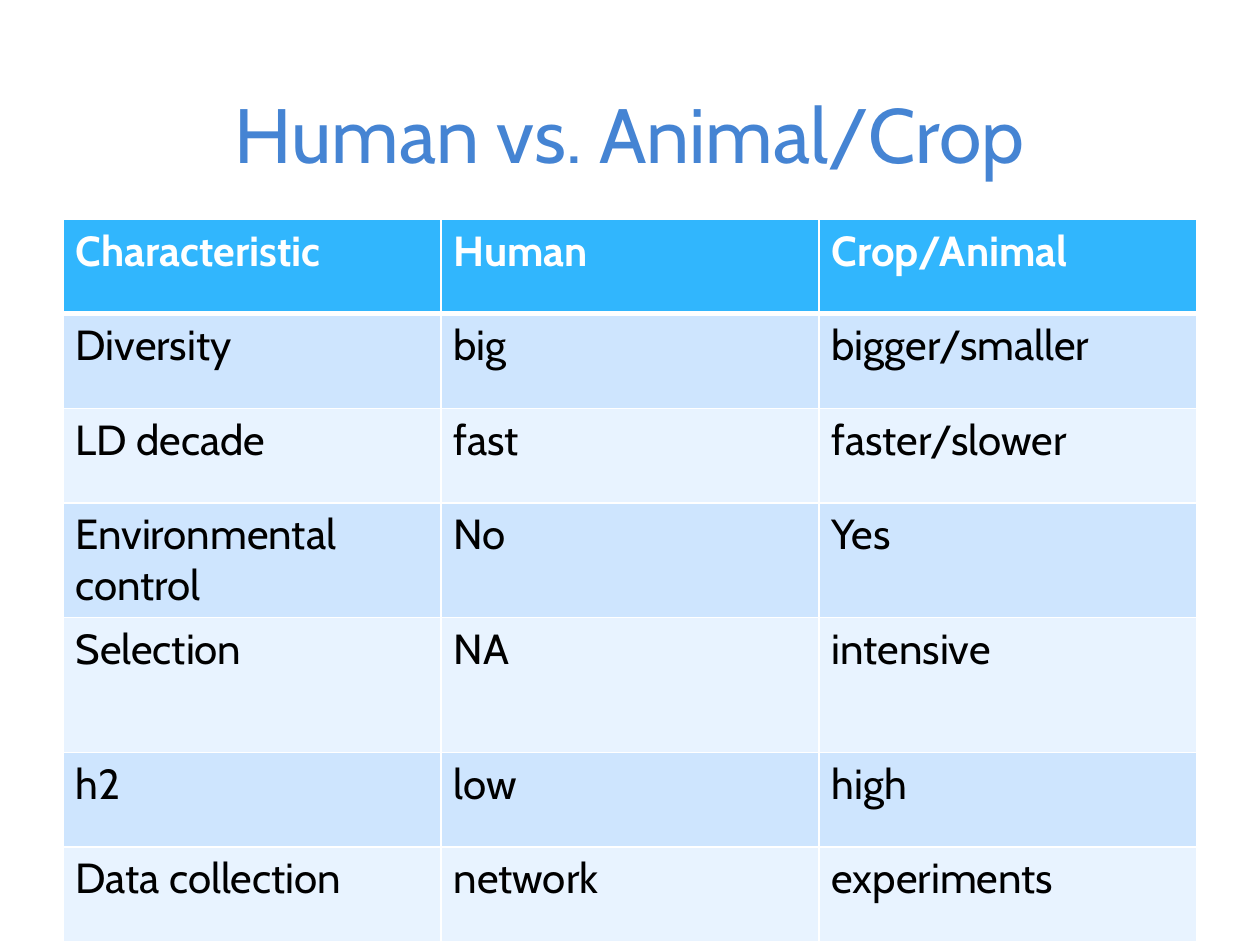
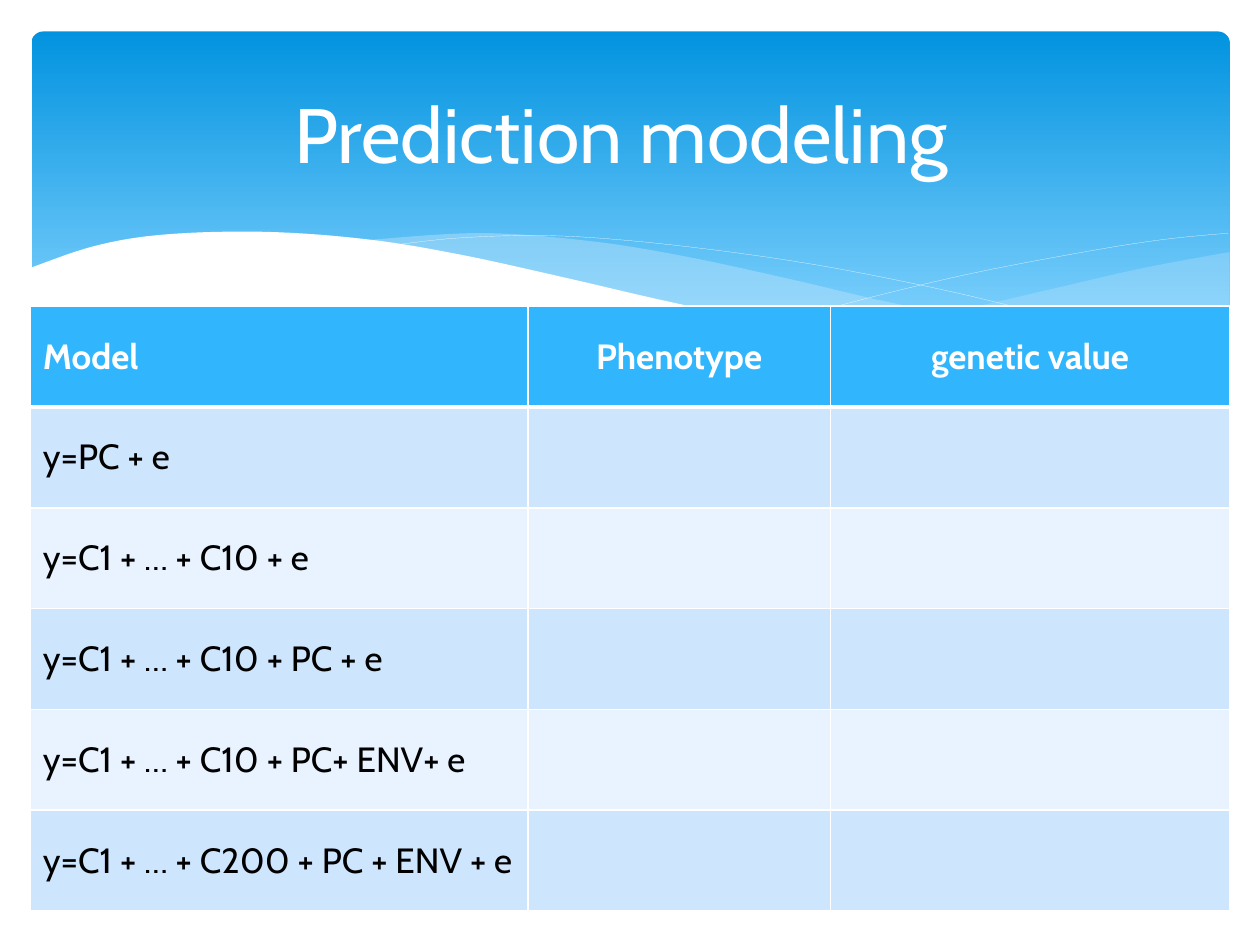
from lxml.etree import SubElement
from pptx import Presentation
from pptx.dml.color import RGBColor
from pptx.enum.shapes import MSO_SHAPE as SHAPE
from pptx.enum.text import MSO_ANCHOR as ANCHOR, PP_ALIGN as ALIGN
from pptx.oxml.ns import qn
from pptx.util import Inches, Pt

FONT = "Cabin"
WHITE, BLACK, TITLE_BLUE = "FFFFFF", "000000", "4584D3"
HEADER, BANDS = "31B6FD", ("E8F3FF", "CEE5FE")
SKY_TOP, SKY_BOTTOM, WAVE = "0293E0", "83D3FE", "C6E7FC"
TITLE_BOX = {"left": 0.5, "top": 0.37, "width": 9, "height": 1.37}
STEPS = 8


def paint(fill, color):
    fill.solid()
    fill.fore_color.rgb = RGBColor.from_string(color)


def smooth(knots):
    padded = [knots[0], *knots, knots[-1]]
    points = [knots[0]]
    for a, b, c, d in zip(padded, padded[1:], padded[2:], padded[3:]):
        for step in range(1, STEPS + 1):
            t = step / STEPS
            points.append(tuple(
                (2 * q + (r - p) * t + (2 * p - 5 * q + 4 * r - s) * t ** 2
                 + (3 * q - p - 3 * r + s) * t ** 3) / 2
                for p, q, r, s in zip(a, b, c, d)))
    return points


right_crest = [(9.76, 2), (9.06, 2.13), (8.32, 2.3), (7.53, 2.48), (6.61, 2.65)]
right_trough = [(6.61, 2.65), (7.32, 2.74), (8.03, 2.78), (8.72, 2.74), (9.35, 2.62), (9.76, 2.47)]
middle_crest = [(8.93, 2.73), (8.07, 2.6), (7.06, 2.4), (6.29, 2.22),
                (5.41, 2.03), (4.65, 1.91), (3.8, 1.85), (2.86, 1.91)]
middle_trough = [(2.86, 1.91), (3.62, 2.03), (4.49, 2.22), (5.3, 2.4),
                 (6.18, 2.58), (7.09, 2.72), (8.07, 2.78), (8.93, 2.73)]
falling_line = [(3.09, 1.95), (3.63, 1.89), (4.33, 1.87), (5.1, 1.92),
                (6.08, 2.04), (6.95, 2.19), (7.95, 2.41), (9.07, 2.72)]
rising_line = [(6.13, 2.57), (6.95, 2.35), (7.76, 2.16), (8.66, 1.99), (9.24, 1.9), (9.75, 1.85)]
front_crest = [(9.77, 2.46), (9.1, 2.67), (8.09, 2.77), (7.08, 2.7), (6.03, 2.54),
               (5.29, 2.39), (4.47, 2.2), (3.65, 2.02), (2.92, 1.9), (2.11, 1.84),
               (1.32, 1.86), (0.76, 1.95), (0.23, 2.13)]
front_base = [(0.23, 3.29), (9.77, 3.29)]

filled_waves = [
    (smooth(right_crest) + smooth(right_trough), WAVE, 29),
    (smooth(middle_crest) + smooth(middle_trough), WAVE, 40),
    (smooth(front_crest) + front_base, WHITE, 100),
]
line_waves = [(smooth(knots), None, 100) for knots in (falling_line, rising_line)]
waves = filled_waves[:2] + line_waves + filled_waves[2:]

slides = [
    {
        "title": "Human vs. Animal/Crop", "title_color": TITLE_BLUE, "sky": False,
        "at": (0.5, 1.74), "cols": [3] * 3, "rows": [0.75] * 4 + [1.07] + [0.75] * 2,
        "size": 24, "anchor": ANCHOR.TOP, "aligns": [ALIGN.LEFT] * 3,
        "cells": [
            ("Characteristic", "Human", "Crop/Animal"),
            ("Diversity", "big", "bigger/smaller"),
            ("LD decade", "fast", "faster/slower"),
            ("Environmental control", "No", "Yes"),
            ("Selection", "NA", "intensive"),
            ("h2", "low", "high"),
            ("Data collection", "network", "experiments"),
        ],
    },
    {
        "title": "Prediction modeling ", "title_color": WHITE, "sky": True,
        "at": (0.24, 2.43), "cols": [3.95, 2.4, 3.17], "rows": [0.8] * 6,
        "size": 20, "anchor": ANCHOR.MIDDLE, "aligns": [ALIGN.LEFT] + [ALIGN.CENTER] * 2,
        "cells": [
            ("Model", "Phenotype", "genetic value"),
            ("y=PC + e", "", ""),
            ("y=C1 + … + C10 + e", "", ""),
            ("y=C1 + … + C10 + PC + e", "", ""),
            ("y=C1 + … + C10 + PC+ ENV+ e", "", ""),
            ("y=C1 + … + C200 + PC + ENV + e", "", ""),
        ],
    },
]

prs = Presentation()
prs.slide_width, prs.slide_height = Inches(10), Inches(7.5)

for d in slides:
    s = prs.slides.add_slide(prs.slide_layouts[5])
    paint(s.background.fill, WHITE)

    if d["sky"]:
        sp = s.shapes.add_shape(SHAPE.ROUNDED_RECTANGLE, *map(Inches, (0.25, 0.25, 9.51, 2.7)))
        sp.adjustments[0] = 0.034
        sp.shadow.inherit = False
        sp.line.fill.background()
        sp.fill.gradient()
        sp.fill.gradient_angle = 270
        for stop, position, color in zip(sp.fill.gradient_stops, (0, 0.9), (SKY_TOP, SKY_BOTTOM)):
            stop.position = position
            stop.color.rgb = RGBColor.from_string(color)

        for points, color, opacity in waves:
            start, *rest = [(Inches(x), Inches(y)) for x, y in points]
            builder = s.shapes.build_freeform(*start)
            builder.add_line_segments(rest, close=color is not None)
            sp = builder.convert_to_shape()
            sp.shadow.inherit = False
            if color:
                paint(sp.fill, color)
                rgb = sp.element.spPr.find(qn("a:solidFill")).find(qn("a:srgbClr"))
                SubElement(rgb, qn("a:alpha"), val=str(opacity * 1000))
                sp.line.fill.background()
            else:
                sp.fill.background()
                paint(sp.line.fill, WHITE)
                sp.line.width = Pt(0.1)

    title = s.shapes.title
    for name, value in TITLE_BOX.items():
        setattr(title, name, Inches(value))
    title.text_frame.vertical_anchor = ANCHOR.MIDDLE
    title.element.getparent().append(title.element)
    texts = [(title.text_frame, d["title"], 44, d["title_color"], False, ALIGN.CENTER)]

    cols, rows = d["cols"], d["rows"]
    box = (*d["at"], sum(cols), sum(rows))
    table = s.shapes.add_table(len(rows), len(cols), *map(Inches, box)).table
    for col, width in zip(table.columns, cols):
        col.width = Inches(width)
    for i, (row, height) in enumerate(zip(table.rows, rows)):
        row.height = Inches(height)
        is_header = i == 0
        text_color = WHITE if is_header else BLACK
        for cell, text, align in zip(row.cells, d["cells"][i], d["aligns"]):
            tcPr = cell._tc.get_or_add_tcPr()
            for side in "LRTB":
                under_header = (i, side) in [(0, "B"), (1, "T")]
                ln = SubElement(tcPr, qn("a:ln" + side), w=str(Pt(3 if under_header else 1)))
                SubElement(SubElement(ln, qn("a:solidFill")), qn("a:srgbClr"), val=WHITE)
            paint(cell.fill, HEADER if is_header else BANDS[i % 2])
            cell.vertical_anchor = d["anchor"]
            if text:
                texts.append((cell.text_frame, text, d["size"], text_color, is_header, align))

    for tf, text, size, color, bold, align in texts:
        p = tf.paragraphs[0]
        p.alignment = align
        r = p.add_run()
        r.text = text
        for name, value in {"name": FONT, "size": Pt(size), "bold": bold}.items():
            setattr(r.font, name, value)
        paint(r.font.fill, color)

prs.save("out.pptx")
